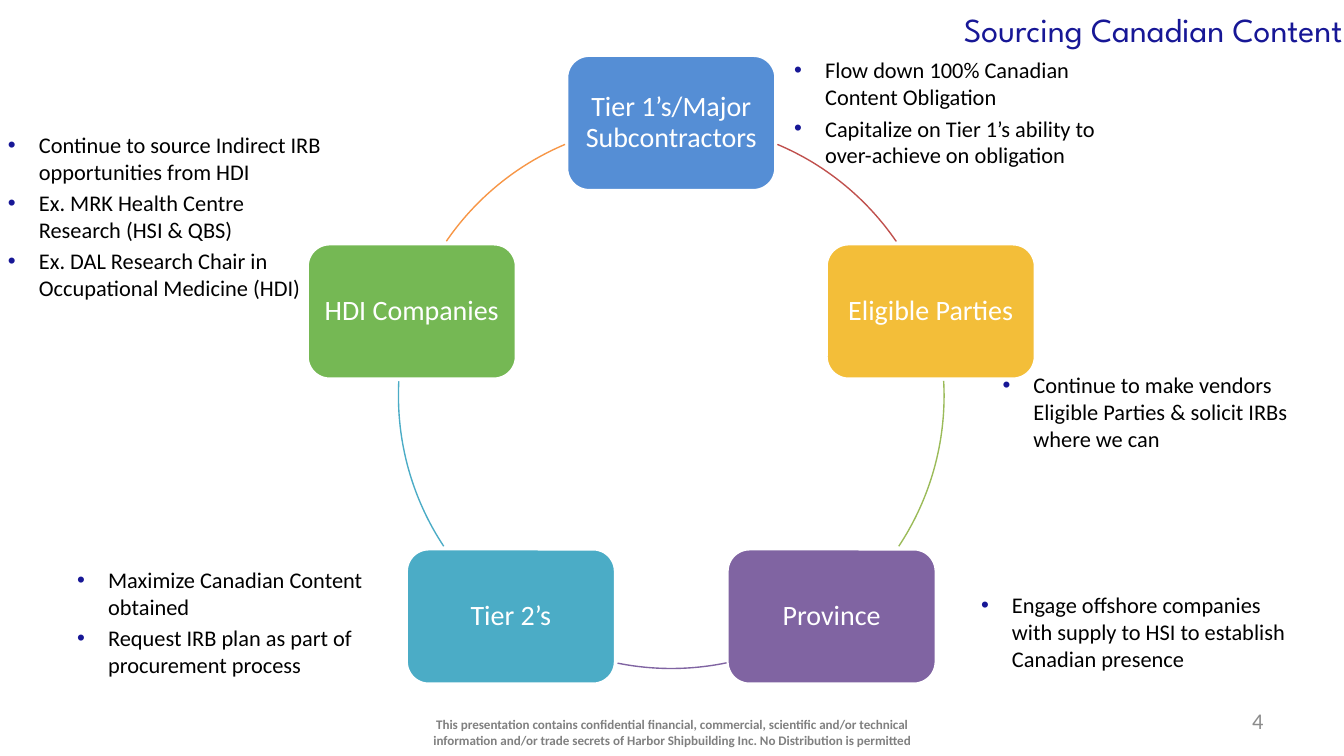
import math

from lxml import etree
from pptx import Presentation
from pptx.dml.color import RGBColor
from pptx.enum.shapes import MSO_SHAPE
from pptx.enum.text import MSO_ANCHOR, PP_ALIGN
from pptx.oxml.ns import qn
from pptx.util import Emu, Inches, Pt

ROUNDED, ARC = MSO_SHAPE.ROUNDED_RECTANGLE, MSO_SHAPE.ARC
TOP, MIDDLE = MSO_ANCHOR.TOP, MSO_ANCHOR.MIDDLE
LEFT, CENTER, RIGHT = PP_ALIGN.LEFT, PP_ALIGN.CENTER, PP_ALIGN.RIGHT

NAVY = RGBColor(0x17, 0x17, 0x96)
BLACK = RGBColor(0x00, 0x00, 0x00)
WHITE = RGBColor(0xFF, 0xFF, 0xFF)
GRAY = RGBColor(0x80, 0x80, 0x80)
LIGHT_GRAY = RGBColor(0x8C, 0x8C, 0x8C)
BLUE = RGBColor(0x55, 0x8E, 0xD5)
GOLD = RGBColor(0xF3, 0xBE, 0x39)
PURPLE = RGBColor(0x80, 0x64, 0xA2)
TEAL = RGBColor(0x4B, 0xAC, 0xC6)
GREEN = RGBColor(0x75, 0xB8, 0x54)
RED = RGBColor(0xC0, 0x50, 0x4D)
OLIVE = RGBColor(0x9B, 0xBB, 0x59)
ORANGE = RGBColor(0xF7, 0x96, 0x46)

WIDTH = Inches(10)
HEIGHT = Emu(WIDTH * 9 // 16)
UNIT = WIDTH / 100

RING_BOX = (29.65, 9.15, 40.6, 40.6)
NODE_SIZE = (15.6, 10.1)
STEPS = [
    ("Tier 1’s/Major Subcontractors", BLUE, RED, (292.9, 325.6)),
    ("Eligible Parties", GOLD, OLIVE, (356.9, 33.5)),
    ("Province", PURPLE, PURPLE, (78.3, 101.4)),
    ("Tier 2’s", TEAL, TEAL, (146.5, 183.1)),
    ("HDI Companies", GREEN, ORANGE, (214.5, 247.1)),
]
NOTES = [
    ((-0.2, 9.35, 25, 13.5), [
        "Continue to source Indirect IRB opportunities from HDI",
        "Ex. MRK Health Centre Research (HSI & QBS)",
        "Ex. DAL Research Chair in Occupational Medicine (HDI)",
    ]),
    ((4.95, 41.7, 25, 9.1), [
        "Maximize Canadian Content obtained",
        "Request IRB plan as part of procurement process",
    ]),
    ((58.3, 3.8, 25, 9.1), [
        "Flow down 100% Canadian Content Obligation",
        "Capitalize on Tier 1’s ability to over-achieve on obligation",
    ]),
    ((73.8, 27.2, 25, 6.8), [
        "Continue to make vendors Eligible Parties & solicit IRBs where we can",
    ]),
    ((72.2, 43.6, 25, 6.8), [
        "Engage offshore companies with supply to HSI to establish Canadian presence",
    ]),
]


def grid(*cells):
    return [Emu(round(cell * UNIT)) for cell in cells]


def add_bullet(para, color):
    properties = para._p.get_or_add_pPr()
    properties.set("marL", str(Inches(0.23)))
    properties.set("indent", str(-Inches(0.23)))
    bullet_color = etree.SubElement(properties, qn("a:buClr"))
    etree.SubElement(bullet_color, qn("a:srgbClr")).set("val", str(color))
    etree.SubElement(properties, qn("a:buFont")).set("typeface", "Arial")
    etree.SubElement(properties, qn("a:buChar")).set("char", "•")


def write_text(shape, lines, size, color, font="Calibri", bold=False, align=LEFT,
               anchor=TOP, insets=(0.8, 0.4), spacing=None, bullet=None):
    frame = shape.text_frame
    frame.word_wrap = True
    frame.vertical_anchor = anchor
    frame.margin_left, frame.margin_top = grid(*insets)
    frame.margin_right, frame.margin_bottom = grid(*insets)
    for index, line in enumerate(lines):
        para = frame.add_paragraph() if index else frame.paragraphs[0]
        if bullet is not None:
            add_bullet(para, bullet)
        if index:
            para.space_before = Pt(size * 0.2)
        if spacing:
            para.line_spacing = spacing
        para.alignment = align
        span = para.add_run()
        span.text = line
        span.font.name = font
        span.font.size = Pt(size)
        span.font.bold = bold
        span.font.color.rgb = color


def add_text(page, box, lines, **style):
    write_text(page.shapes.add_textbox(*grid(*box)), lines, **style)


def add_node(page, box, label, fill):
    node = page.shapes.add_shape(ROUNDED, *grid(*box))
    node.shadow.inherit = False
    node.fill.solid()
    node.fill.fore_color.rgb = fill
    node.line.color.rgb = WHITE
    node.line.width = Pt(2)
    write_text(node, [label], size=15, color=WHITE, align=CENTER,
               anchor=MIDDLE, insets=(0.6, 0.6), spacing=0.9)


def add_arc(page, box, angles, color):
    arc = page.shapes.add_shape(ARC, *grid(*box))
    arc.shadow.inherit = False
    for index, angle in enumerate(angles):
        arc.adjustments[index] = angle * 60000 / 100000
    arc.fill.background()
    arc.line.color.rgb = color
    arc.line.width = Pt(0.75)


def add_cycle(page, box):
    left, top, width, height = box
    node_width, node_height = NODE_SIZE
    for index, (label, fill, arc_color, angles) in enumerate(STEPS):
        turn = math.radians(360 / len(STEPS) * index - 90)
        center_x = left + width / 2 * (1 + math.cos(turn))
        center_y = top + height / 2 * (1 + math.sin(turn))
        node_box = (center_x - node_width / 2, center_y - node_height / 2, *NODE_SIZE)
        add_node(page, node_box, label, fill)
        add_arc(page, box, angles, arc_color)


def add_header(page, box):
    add_text(page, box, ["Sourcing Canadian Content"], size=18, color=NAVY,
             font="League Spartan", align=RIGHT)


def add_note(page, box, lines):
    add_text(page, box, lines, size=12, color=BLACK, bullet=NAVY)


def add_footer(page, notice_box, number_box):
    notice = ("This presentation contains confidential financial, commercial, "
              "scientific and/or technical information and/or trade secrets of "
              "Harbor Shipbuilding Inc. No Distribution is permitted")
    add_text(page, notice_box, [notice], size=7, color=GRAY, bold=True,
             align=CENTER, insets=(1, 0.5))
    add_text(page, number_box, ["4"], size=12, color=LIGHT_GRAY, align=RIGHT,
             anchor=MIDDLE, insets=(1, 0.5))


def main():
    deck = Presentation()
    deck.slide_width, deck.slide_height = WIDTH, HEIGHT
    page = deck.slides.add_slide(deck.slide_layouts[6])
    add_header(page, (47.5, 0.3, 53.2, 3.8))
    add_cycle(page, RING_BOX)
    for box, lines in NOTES:
        add_note(page, box, lines)
    add_footer(page, (29.6, 52.85, 40.8, 3), (71.7, 52.15, 23.3, 3))
    deck.save("out.pptx")


if __name__ == "__main__":
    main()
